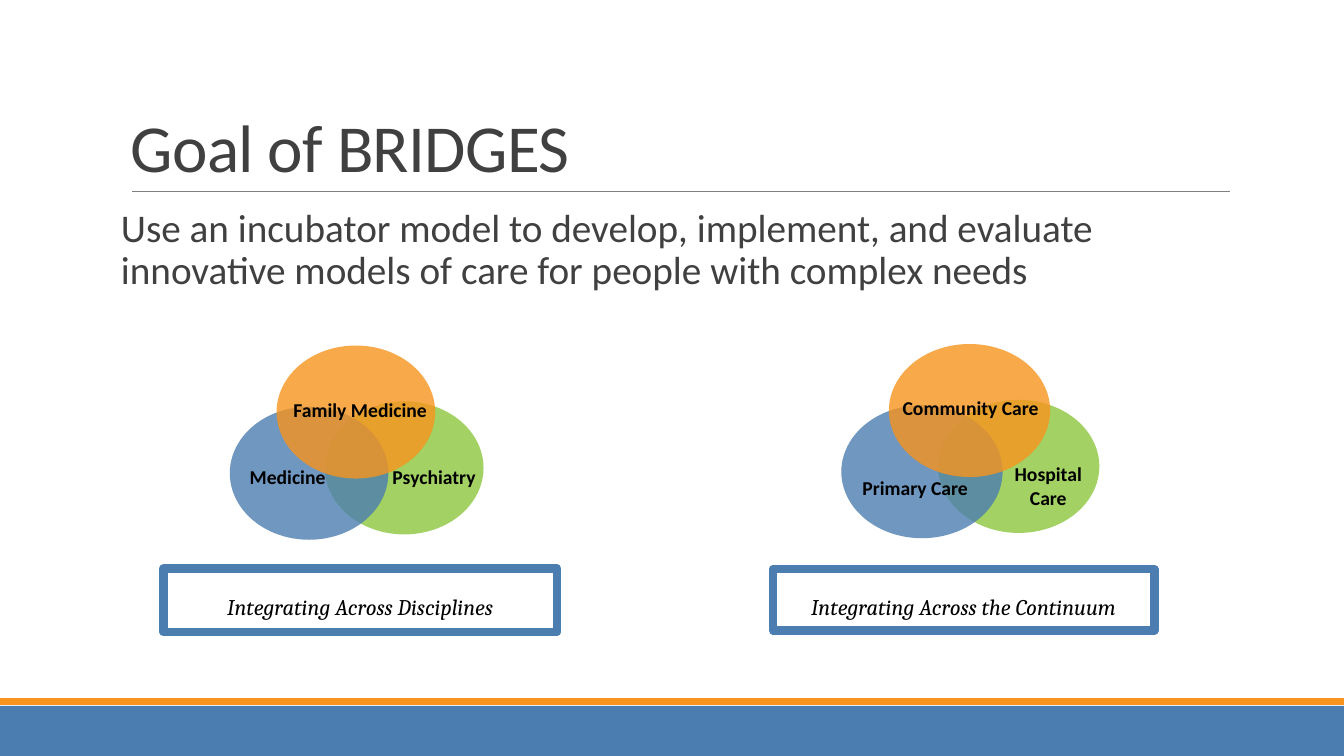
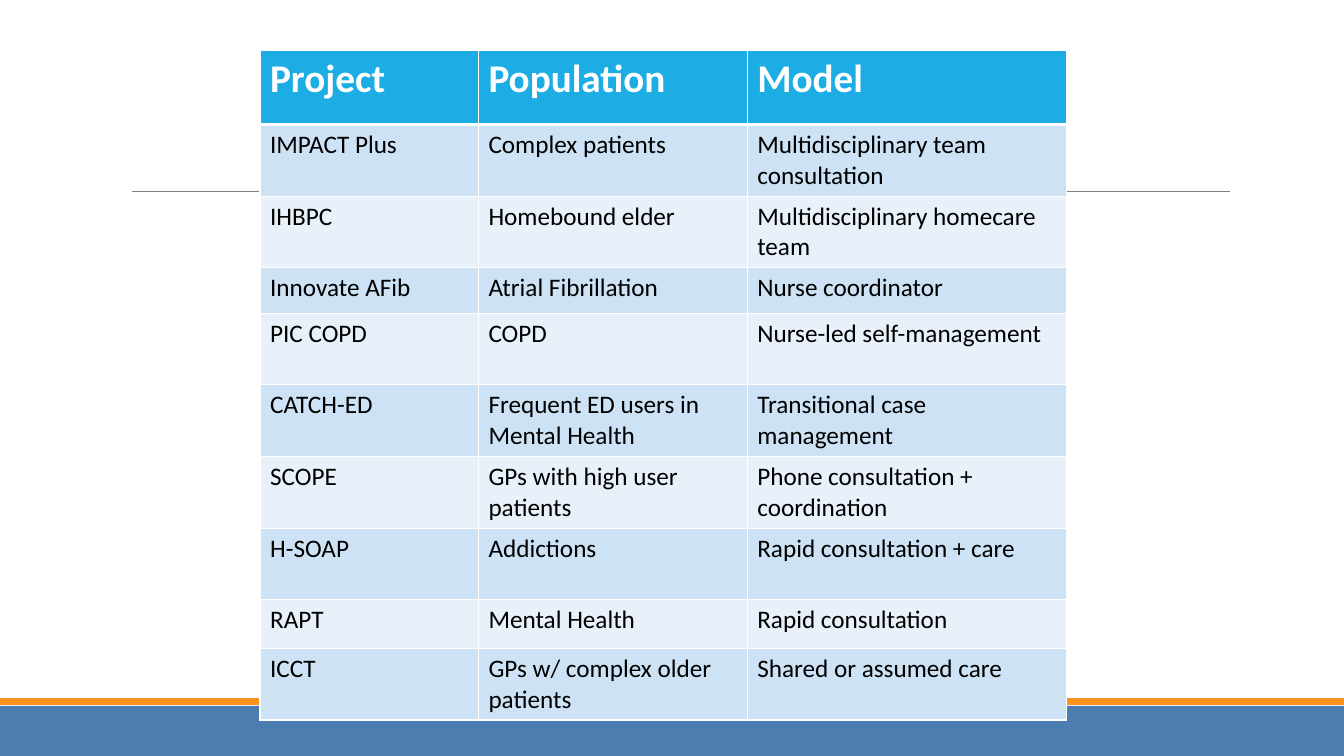
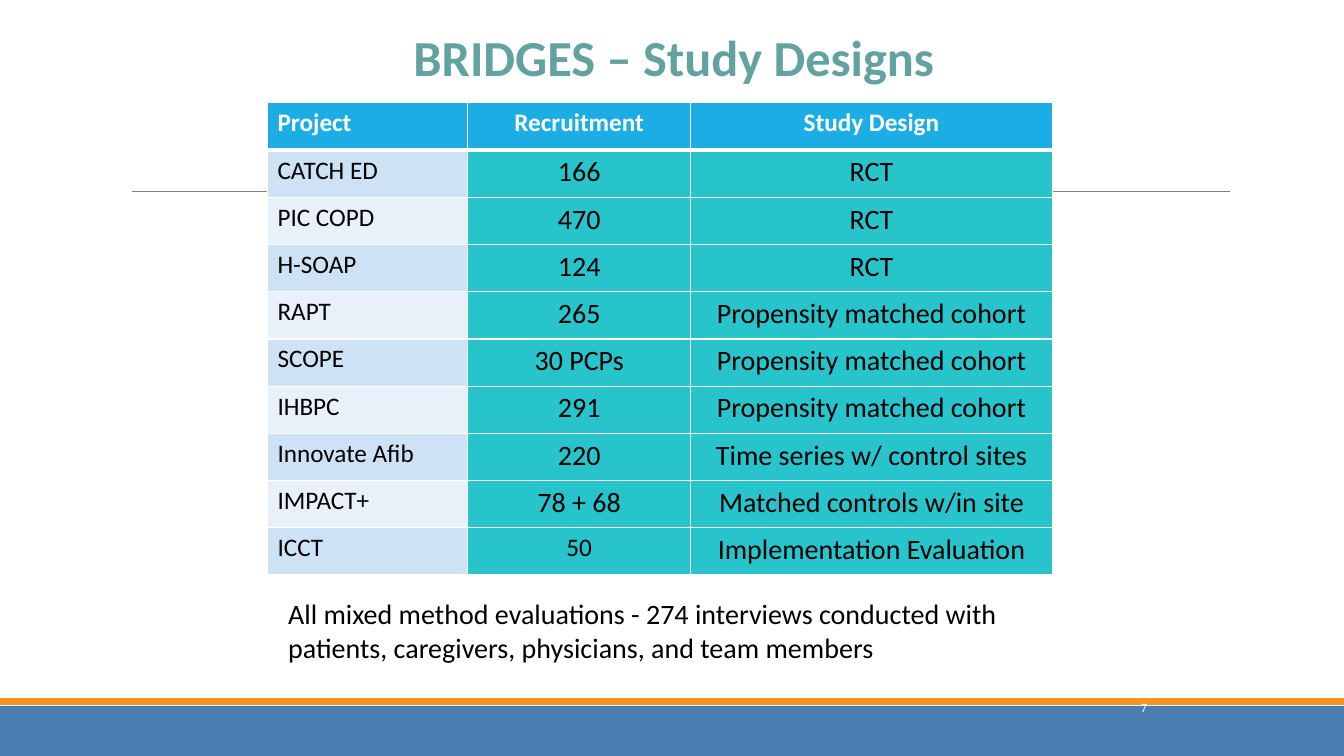
from lxml import etree
from pptx import Presentation
from pptx.dml.color import RGBColor as RGB
from pptx.enum.shapes import MSO_CONNECTOR as CONN, MSO_SHAPE as SHAPE
from pptx.enum.text import MSO_ANCHOR as ANCHOR, PP_ALIGN as ALIGN
from pptx.oxml.ns import qn
from pptx.util import Emu, Inches, Pt

W, H = Inches(13.333), Inches(7.5)
C = dict(blue="4B7DB0", orange="F7941D", green="8CC63E", rule="808080",
         text="404040", black="000000", white="FFFFFF", sage="62A39F",
         head="1CADE4", odd="CDE3F5", even="E8F1FA", teal="28C4CC")
ALIGNS = dict(l=ALIGN.LEFT, c=ALIGN.CENTER, r=ALIGN.RIGHT)
ANCHORS = dict(t=ANCHOR.TOP, m=ANCHOR.MIDDLE, b=ANCHOR.BOTTOM)


def px(share):
    """Percent of the slide's width."""
    return Emu(round(W * share / 100))


def py(share):
    """Percent of the slide's height."""
    return Emu(round(H * share / 100))


def place(x, y, w, h):
    return px(x), py(y), px(w), py(h)


def rgb(name):
    return RGB.from_string(C[name])


# Text
def write(tf, text, size=18, color="black", font="Calibri", bold=False,
          italic=False, align="l", anchor="t", line=None, after=None,
          spacing=None, inset=0.1):
    tf.word_wrap = True
    tf.vertical_anchor = ANCHORS[anchor]
    tf.margin_left = tf.margin_right = Inches(inset)
    for i, words in enumerate(text.split("\n")):
        p = tf.add_paragraph() if i else tf.paragraphs[0]
        p.alignment = ALIGNS[align]
        if line:
            p.line_spacing = line
        if after:
            p.space_after = Pt(after)
        r = p.add_run()
        r.text = words
        f = r.font
        f.name, f.size, f.bold, f.italic = font, Pt(size), bold, italic
        f.color.rgb = rgb(color)
        if spacing:
            r._r.get_or_add_rPr().set("spc", str(round(spacing * 100)))


def label(s, text, at, **fmt):
    write(s.shapes.add_textbox(*place(*at)).text_frame, text, **fmt)


# Shapes
def shape(s, kind, at, fill=None, alpha=None, line=None, width=1):
    sp = s.shapes.add_shape(kind, *place(*at))
    sp.shadow.inherit = False
    if fill:
        sp.fill.solid()
        sp.fill.fore_color.rgb = rgb(fill)
    else:
        sp.fill.background()
    if alpha:
        clr = sp._element.spPr.find(".//" + qn("a:srgbClr"))
        etree.SubElement(clr, qn("a:alpha")).set("val", str(alpha * 1000))
    if line:
        sp.line.color.rgb = rgb(line)
        sp.line.width = Pt(width)
    else:
        sp.line.fill.background()
    return sp


def venn(s, x, y, w, labels):
    """Three overlapping ellipses, drawn from back to front."""
    h = 17.6
    for color, dx, dy in (("green", 0.6, 0.42), ("blue", 0, 0.46),
                          ("orange", 0.295, 0)):
        shape(s, SHAPE.OVAL, (x + dx * w, y + dy * h, w, h), color, alpha=80)
    for text, at, fmt in labels:
        label(s, text, at, size=14, bold=True, **fmt)


def caption(s, text, at):
    sp = shape(s, SHAPE.RECTANGLE, at, line="blue", width=6)
    write(sp.text_frame, text, size=16, font="Cambria", italic=True,
          align="c", anchor="m", line=1.5, inset=0.15)


# Tables
def border(cell, widths):
    tcPr = cell._tc.get_or_add_tcPr()
    for side, width in zip("LRTB", widths):
        ln = etree.SubElement(tcPr, qn("a:ln" + side), w=str(Pt(width)))
        fill = etree.SubElement(ln, qn("a:solidFill"))
        etree.SubElement(fill, qn("a:srgbClr"), val=C["white"])


def table(s, x, y, cols, heights, rows, style):
    """style(row, column) gives the fill and the text format of a cell."""
    at = place(x, y, sum(cols), sum(heights))
    tbl = s.shapes.add_table(len(rows), len(cols), *at).table
    for col, w in zip(tbl.columns, cols):
        col.width = px(w)
    for i, (h, row) in enumerate(zip(heights, rows)):
        tbl.rows[i].height = py(h)
        for j, text in enumerate(row):
            cell = tbl.cell(i, j)
            border(cell, (1, 1, 3 if i == 1 else 1, 3 if i == 0 else 1))
            fill, fmt = style(i, j)
            cell.fill.solid()
            cell.fill.fore_color.rgb = rgb(fill)
            write(cell.text_frame, text, **fmt)


def banded(i):
    return "odd" if i % 2 else "even"


def project_style(i, j):
    if i == 0:
        return "head", dict(size=28, color="white", bold=True)
    return banded(i), {}


def design_style(i, j):
    align = "c" if j else "l"
    if i == 0:
        return "head", dict(color="white", bold=True, align=align)
    if j == 0:
        return banded(i), {}
    return "teal", dict(size=18 if (i, j) == (9, 1) else 20, align=align)


# Frame shared by all slides
def new_slide(prs):
    s = prs.slides.add_slide(prs.slide_layouts[6])
    shape(s, SHAPE.RECTANGLE, (0, 93.38, 100, 6.62), "blue")
    shape(s, SHAPE.RECTANGLE, (0, 92.35, 100, 0.9), "orange")
    rule = s.shapes.add_connector(CONN.STRAIGHT, px(9.83), py(25.3),
                                  px(91.55), py(25.3))
    rule.line.color.rgb = rgb("rule")
    rule.line.width = Pt(0.5)
    etree.SubElement(rule._element.spPr, qn("a:effectLst"))
    return s


# Slides
def goal(prs):
    s = new_slide(prs)
    label(s, "Goal of BRIDGES", (9, 4.1, 82.5, 21.2), size=48, color="text",
          anchor="b", line=0.85, spacing=-0.5)
    label(s, "Use an incubator model to develop, implement, and evaluate "
          "innovative models of care for people with complex needs",
          (9, 26.9, 82.5, 58.7), size=28, color="text", line=0.9, after=2,
          inset=0)
    mid = dict(align="c")
    top = dict(line=1.15, after=10)
    venn(s, 17.1, 45.7, 11.8, [
        ("Family Medicine", (21.1, 51.5, 14.6, 5.9), top),
        ("Medicine", (15.2, 60.9, 12.4, 5.2), mid),
        ("Psychiatry", (27.15, 60.8, 10.3, 6.9), mid)])
    caption(s, "Integrating Across Disciplines", (12.15, 75.2, 29.3, 8.4))
    venn(s, 62.6, 45.5, 12, [
        ("Community Care", (64.8, 51.2, 14.85, 5.9), top | mid),
        ("Primary Care", (61.8, 62.3, 12.6, 5.2), mid),
        ("Hospital\nCare", (72.8, 60.5, 10.4, 12.1), mid)])
    caption(s, "Integrating Across the Continuum", (57.5, 75.3, 28.4, 8.1))


def projects(prs):
    s = new_slide(prs)
    rows = [
        ("Project", "Population", "Model"),
        ("IMPACT Plus", "Complex patients",
         "Multidisciplinary team consultation"),
        ("IHBPC", "Homebound elder", "Multidisciplinary homecare team"),
        ("Innovate AFib", "Atrial Fibrillation", "Nurse coordinator"),
        ("PIC COPD", "COPD", "Nurse-led self-management"),
        ("CATCH-ED", "Frequent ED users in Mental Health",
         "Transitional case management"),
        ("SCOPE", "GPs with high user patients",
         "Phone consultation + coordination"),
        ("H-SOAP", "Addictions", "Rapid consultation + care"),
        ("RAPT", "Mental Health", "Rapid consultation"),
        ("ICCT", "GPs w/ complex older patients", "Shared or assumed care"),
    ]
    special = {0: 9.8, 3: 6.1, 8: 6.5}
    heights = [special.get(i, 9.4) for i in range(len(rows))]
    table(s, 19.35, 6.67, (16.25, 20, 23.75), heights, rows, project_style)


def designs(prs):
    s = new_slide(prs)
    label(s, "7", (78.4, 90.9, 7.7, 5.3), size=9, color="white", align="r",
          anchor="m")
    cohort = "Propensity matched cohort"
    rows = [
        ("Project", "Recruitment", "Study Design"),
        ("CATCH ED", "166", "RCT"),
        ("PIC COPD", "470", "RCT"),
        ("H-SOAP", "124", "RCT"),
        ("RAPT", "265", cohort),
        ("SCOPE", "30 PCPs", cohort),
        ("IHBPC", "291", cohort),
        ("Innovate Afib", "220", "Time series w/ control sites"),
        ("IMPACT+", "78 + 68", "Matched controls w/in site"),
        ("ICCT", "50", "Implementation Evaluation"),
    ]
    table(s, 19.9, 13.6, (14.9, 16.6, 26.9), [6.25] * len(rows), rows,
          design_style)
    label(s, "BRIDGES – Study Designs", (22.1, 2.8, 56.1, 9.5), size=36,
          color="sage", bold=True, align="c")
    label(s, "All mixed method evaluations - 274 interviews conducted with "
          "patients, caregivers, physicians, and team members",
          (20.7, 78.3, 59, 10.3), size=20)


def main():
    prs = Presentation()
    prs.slide_width, prs.slide_height = W, H
    for build in (goal, projects, designs):
        build(prs)
    prs.save("out.pptx")


if __name__ == "__main__":
    main()
